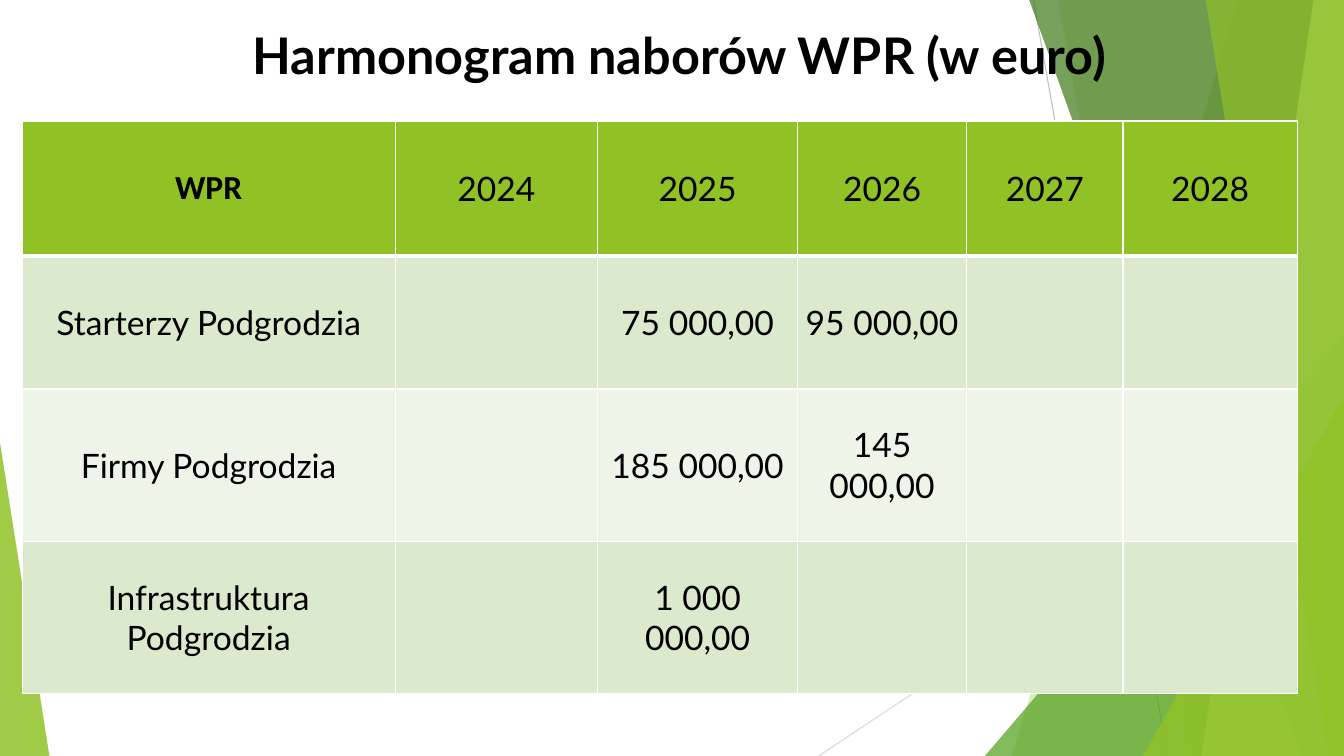
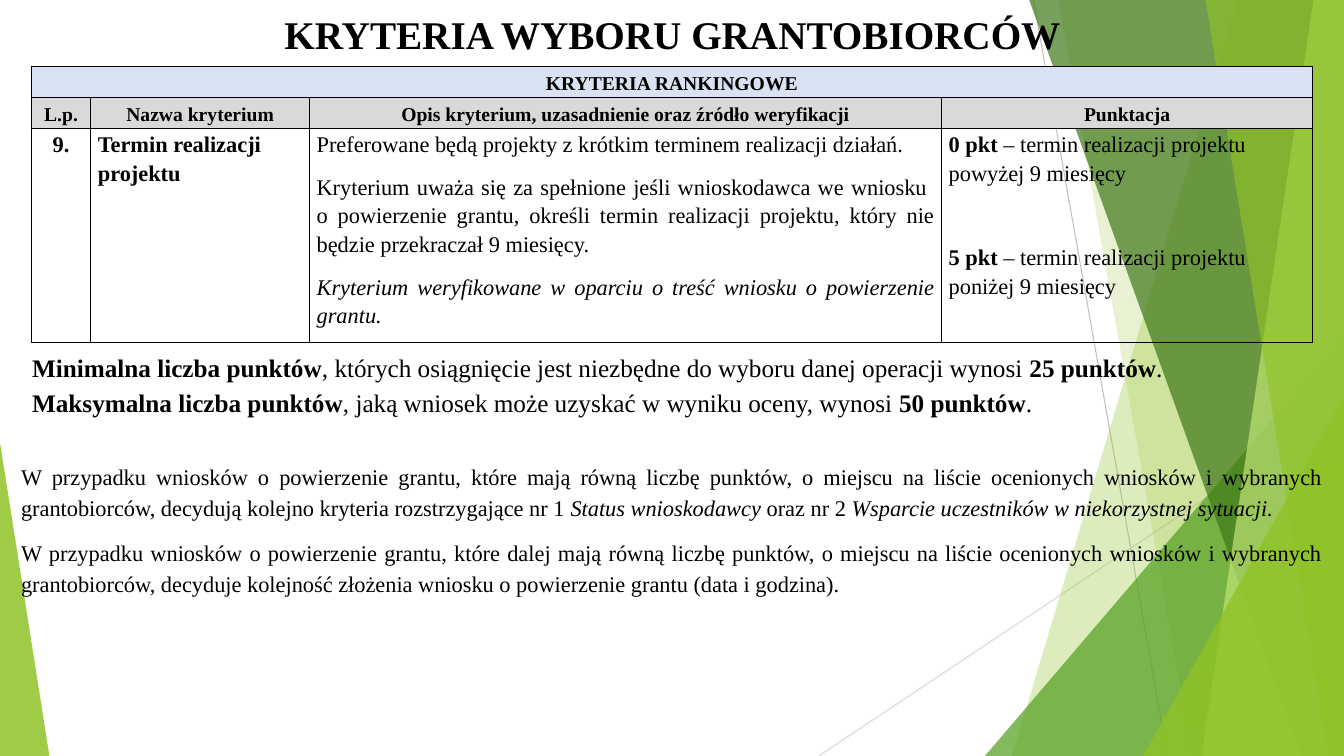
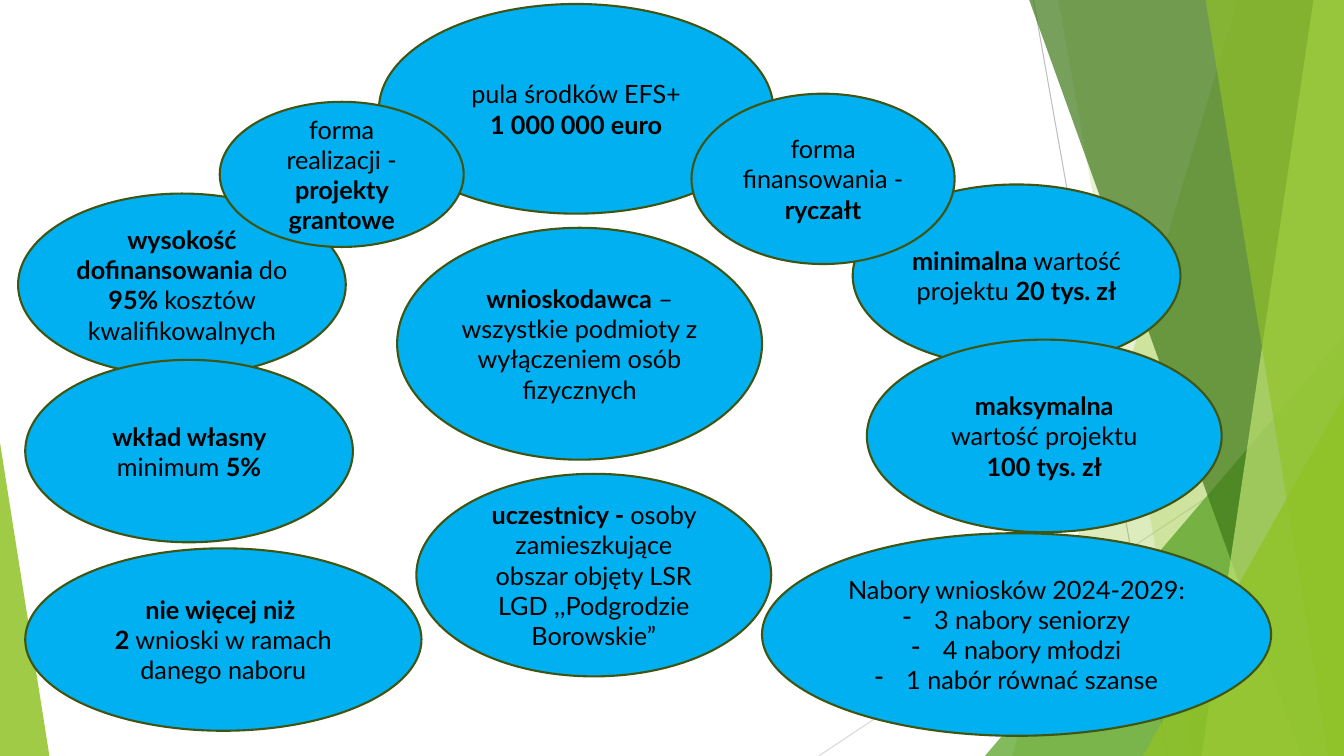
from dataclasses import dataclass

from lxml import etree
from pptx import Presentation
from pptx import util as u
from pptx.dml.color import RGBColor
from pptx.enum import shapes, text
from pptx.oxml.ns import qn


@dataclass(frozen=True)
class Theme:
    sans: str = "Lato"
    label: str = "Calibri"
    serif: str = "Times New Roman"
    ink: str = "000000"
    white: str = "FFFFFF"
    lime: str = "90C226"
    pale_lime: str = "C0E474"
    green: str = "54A021"
    forest: str = "3F7819"
    band_dark: str = "DBE9CD"
    band_light: str = "EEF4E8"
    blue_head: str = "D9E2F3"
    grey_head: str = "D9D9D9"
    grey_line: str = "BFBFBF"
    bubble: str = "00B0F0"
    bubble_edge: str = "3F5511"
    title: int = 36
    title_small: int = 28
    large: int = 24
    body: int = 18
    small: int = 16
    caption: int = 14


THEME = Theme()
WIDTH, HEIGHT = u.Inches(13.333), u.Inches(7.5)
LEFT, CENTER, JUSTIFY = (text.PP_ALIGN.LEFT, text.PP_ALIGN.CENTER,
                         text.PP_ALIGN.JUSTIFY)
TOP, MIDDLE = text.MSO_ANCHOR.TOP, text.MSO_ANCHOR.MIDDLE


def across(percent):
    return round(WIDTH * percent / 100)


def down(percent):
    return round(HEIGHT * percent / 100)


def area(left, top, width, height):
    """Turn percentages of the slide into a position and a size."""
    return across(left), down(top), across(width), down(height)


def rgb(color):
    return RGBColor.from_string(color)


def write(frame, paragraphs, *, size=THEME.body, font=THEME.sans,
          align=CENTER, leading=None, after=0, bold=False):
    """Fill a frame; *stars* mark bold, _underscores_ italic, "- " a bullet."""
    frame.word_wrap = True
    if isinstance(paragraphs, str):
        paragraphs = [paragraphs]
    for index, content in enumerate(paragraphs):
        para = frame.add_paragraph() if index else frame.paragraphs[0]
        para.alignment = align
        para.line_spacing = leading
        if after and index < len(paragraphs) - 1:
            para.space_after = u.Pt(after)
        if content.startswith("- "):
            content = content[2:]
            add_bullet(para)
        for number, line in enumerate(content.split("\n")):
            if number:
                para.add_line_break()
            for b, chunk in enumerate(line.split("*")):
                for i, part in enumerate(chunk.split("_")):
                    if part:
                        span = para.add_run()
                        span.text = part
                        span.font.name = font
                        span.font.size = u.Pt(size)
                        span.font.bold = bold or b % 2 == 1
                        span.font.italic = i % 2 == 1
                        span.font.color.rgb = rgb(THEME.ink)


def add_bullet(para):
    properties = para._p.get_or_add_pPr()
    indent = u.Inches(0.31)
    properties.set("marL", str(indent))
    properties.set("indent", str(-indent))
    etree.SubElement(properties, qn("a:buChar")).set("char", "-")


def add_text(page, place, paragraphs, anchor=TOP, **form):
    box = page.shapes.add_textbox(*area(*place))
    box.text_frame.vertical_anchor = anchor
    write(box.text_frame, paragraphs, **form)


def add_title(page, place, content, **form):
    add_text(page, place, content, MIDDLE, bold=True, leading=0.9, **form)


def paint(shape, color, opacity=100):
    shape.shadow.inherit = False
    shape.fill.solid()
    shape.fill.fore_color.rgb = rgb(color)
    shape.line.fill.background()
    if opacity < 100:
        tint = shape.element.spPr.find(".//" + qn("a:srgbClr"))
        etree.SubElement(tint, qn("a:alpha")).set("val", str(opacity * 1000))


def add_facet(page, top_x, bottom_x, color, opacity):
    """A full-height panel with a slanted left side and the slide's right edge."""
    outline = page.shapes.build_freeform(across(top_x), 0)
    outline.add_line_segments(
        [(WIDTH, 0), (WIDTH, HEIGHT), (across(bottom_x), HEIGHT)], close=True)
    paint(outline.convert_to_shape(), color, opacity)


def add_corner(page, left, top, width, peak, color, opacity):
    """A triangle that stands on the bottom edge."""
    triangle = page.shapes.add_shape(
        shapes.MSO_SHAPE.ISOSCELES_TRIANGLE,
        *area(left, top, width, 100 - top))
    triangle.adjustments[0] = peak
    paint(triangle, color, opacity)


def add_hairline(page, start, end, color):
    line = page.shapes.add_connector(
        shapes.MSO_CONNECTOR.STRAIGHT, across(start[0]), down(start[1]),
        across(end[0]), down(end[1]))
    line.line.color.rgb = rgb(color)
    line.line.width = u.Pt(0.75)
    etree.SubElement(line.element.spPr, qn("a:effectLst"))


def decorate(layout, page):
    """Draw the green facets on a page, then move them to its layout."""
    for holder in list(layout.placeholders):
        layout.shapes.element.remove(holder.element)
    add_hairline(page, (76.9, 0), (86.87, 100), THEME.grey_line)
    add_hairline(page, (100, 53.73), (60.92, 100), THEME.grey_head)
    add_facet(page, 92.1, 75.3, THEME.lime, 30)
    add_facet(page, 78.75, 88.73, THEME.lime, 20)
    add_corner(page, 73.28, 44.4, 26.72, 1, THEME.green, 72)
    add_facet(page, 76.58, 96.83, THEME.forest, 70)
    add_facet(page, 97.73, 89.4, THEME.pale_lime, 70)
    add_facet(page, 89.7, 98.85, THEME.lime, 65)
    add_corner(page, 85.05, 52.4, 14.95, 1, THEME.lime, 80)
    add_corner(page, 0, 58.53, 3.68, 0, THEME.lime, 85)
    for shape in list(page.shapes):
        layout.shapes.element.append(shape.element)


def add_grid(page, left, top, columns, rows):
    """An unstyled table with the given column widths and row heights."""
    table = page.shapes.add_table(
        len(rows), len(columns),
        *area(left, top, sum(columns), sum(rows))).table
    table.first_row = table.horz_banding = False
    for column, width in zip(table.columns, columns):
        column.width = across(width)
    for row, height in zip(table.rows, rows):
        row.height = down(height)
    return table


def style_cell(cell, fill, edge, inset, anchor=MIDDLE, top=1, bottom=1):
    cell.vertical_anchor = anchor
    cell.margin_left = cell.margin_right = u.Inches(inset)
    cell.margin_top = cell.margin_bottom = 0
    if fill:
        cell.fill.solid()
        cell.fill.fore_color.rgb = rgb(fill)
    else:
        cell.fill.background()
    properties = cell._tc.get_or_add_tcPr()
    sides = {"a:lnL": 1, "a:lnR": 1, "a:lnT": top, "a:lnB": bottom}
    for index, (side, weight) in enumerate(sides.items()):
        border = etree.Element(qn(side), w=str(u.Pt(weight)))
        solid = etree.SubElement(border, qn("a:solidFill"))
        etree.SubElement(solid, qn("a:srgbClr")).set("val", edge)
        properties.insert(index, border)


def add_bubble(page, place, paragraphs):
    bubble = page.shapes.add_shape(shapes.MSO_SHAPE.OVAL, *area(*place))
    paint(bubble, THEME.bubble)
    bubble.line.color.rgb = rgb(THEME.bubble_edge)
    bubble.line.width = u.Pt(1.5)
    bubble.text_frame.vertical_anchor = MIDDLE
    write(bubble.text_frame, paragraphs)


def build_schedule(page):
    content = [
        ["WPR", "2024", "2025", "2026", "2027", "2028"],
        ["Starterzy Podgrodzia", "", "75 000,00", "95 000,00", "", ""],
        ["Firmy Podgrodzia", "", "185 000,00", "145 000,00", "", ""],
        ["Infrastruktura Podgrodzia", "", "1 000 000,00", "", "", ""],
    ]
    fills = [THEME.lime, THEME.band_dark, THEME.band_light, THEME.band_dark]
    table = add_grid(page, 1.65, 16,
                     [27.75, 15.08, 14.85, 12.6, 11.63, 12.98],
                     [17.87, 17.6, 20.13, 20.13])
    for r, row in enumerate(content):
        for c, value in enumerate(row):
            cell = table.cell(r, c)
            style_cell(cell, fills[r], THEME.white, 0.01,
                       top=3 if r == 1 else 1, bottom=3 if r == 0 else 1)
            corner = r == c == 0
            write(cell.text_frame, value, size=THEME.large, bold=corner,
                  font=THEME.label if corner else THEME.sans)
    add_title(page, (7.43, 1.33, 86.25, 12.67),
              "Harmonogram naborów WPR (w euro)", size=THEME.title)


def build_criteria(page):
    add_title(page, (6.9, 1.07, 86.25, 7.6), "KRYTERIA WYBORU GRANTOBIORCÓW",
              size=THEME.title_small, font=THEME.serif)
    heads = [
        ["KRYTERIA RANKINGOWE", "", "", ""],
        ["L.p.", "Nazwa kryterium",
         "Opis kryterium, uzasadnienie oraz źródło weryfikacji", "Punktacja"],
    ]
    details = [
        ("*9.*", CENTER, 10),
        ("*Termin realizacji projektu*", LEFT, 10),
        (["Preferowane będą projekty z krótkim terminem realizacji działań. ",
          "Kryterium uważa się za spełnione jeśli wnioskodawca we wniosku \n"
          "o powierzenie grantu, określi termin realizacji projektu, który "
          "nie będzie przekraczał 9 miesięcy.",
          "_Kryterium weryfikowane w oparciu o treść wniosku o powierzenie "
          "grantu._"], JUSTIFY, 10),
        (["*0 pkt* – termin realizacji projektu powyżej 9 miesięcy",
          "*5 pkt* – termin realizacji projektu poniżej 9 miesięcy"],
         LEFT, 40),
    ]
    table = add_grid(page, 2.33, 8.8, [4.43, 16.28, 47.03, 27.6],
                     [4.13, 4.13, 26.4])
    prose = {"font": THEME.serif, "leading": 1.15}
    for r, (row, fill) in enumerate(
            zip(heads, [THEME.blue_head, THEME.grey_head])):
        for c, value in enumerate(row):
            cell = table.cell(r, c)
            style_cell(cell, fill, THEME.ink, 0.06)
            write(cell.text_frame, value, size=THEME.caption, bold=True,
                  **prose)
    for c, (value, align, after) in enumerate(details):
        cell = table.cell(2, c)
        style_cell(cell, None, THEME.ink, 0.07, anchor=TOP)
        write(cell.text_frame, value, size=THEME.small, align=align,
              after=after, **prose)
    table.cell(0, 0).merge(table.cell(0, 3))

    add_text(page, (1.65, 45.33, 96, 10.27),
             "*Minimalna liczba punktów*, których osiągnięcie jest niezbędne "
             "do wyboru danej operacji wynosi *25 punktów*. \n"
             "*Maksymalna liczba punktów*, jaką wniosek może uzyskać w wyniku "
             "oceny, wynosi *50 punktów*.", align=LEFT, **prose)
    add_text(page, (0.83, 60.13, 98.33, 19.47), [
        "W przypadku wniosków o powierzenie grantu, które mają równą liczbę "
        "punktów, o miejscu na liście ocenionych wniosków i wybranych "
        "grantobiorców, decydują kolejno kryteria rozstrzygające nr 1 "
        "_Status wnioskodawcy_ oraz nr 2 _Wsparcie uczestników w "
        "niekorzystnej sytuacji. _",
        "W przypadku wniosków o powierzenie grantu, które dalej mają równą "
        "liczbę punktów, o miejscu na liście ocenionych wniosków i wybranych "
        "grantobiorców, decyduje kolejność złożenia wniosku o powierzenie "
        "grantu (data i godzina).",
    ], size=THEME.small, align=JUSTIFY, after=10, **prose)


def build_overview(page):
    bubbles = [
        ((1.35, 25.6, 24.38, 24.13),
         "*wysokość dofinansowania *do *95% *kosztów kwalifikowalnych"),
        ((1.88, 47.6, 24.38, 24.13), "*wkład własny *minimum *5%*"),
        ((63.45, 24.4, 24.38, 24.13),
         "*minimalna *wartość projektu *20 tys. zł*"),
        ((64.5, 44.93, 26.4, 25.47),
         "*maksymalna* wartość projektu *100 tys. zł*"),
        ((29.55, 30.13, 27.15, 30.67),
         "*wnioskodawca* – wszystkie podmioty z wyłączeniem osób fizycznych"),
        ((56.7, 70.53, 37.88, 26.8),
         ["Nabory wniosków 2024-2029:", "- 3 nabory seniorzy",
          "- 4 nabory młodzi", "- 1 nabór równać szanse"]),
        ((28.2, 0.53, 29.33, 27.73),
         ["pula środków EFS+", "*1 000 000 euro*"]),
        ((1.88, 72.53, 29.48, 24.13),
         "*nie więcej niż *\n*2* wnioski w ramach danego naboru"),
        ((16.35, 13.47, 18.15, 19.2),
         "forma realizacji - *projekty grantowe*"),
        ((51.45, 12.4, 19.58, 22.53), "forma finansowania - *ryczałt*"),
        ((30.98, 62.67, 26.4, 26.8),
         "*uczestnicy - *osoby zamieszkujące obszar objęty LSR LGD "
         ",,Podgrodzie Borowskie”"),
    ]
    for place, paragraphs in bubbles:
        add_bubble(page, place, paragraphs)


def main():
    deck = Presentation()
    deck.slide_width, deck.slide_height = WIDTH, HEIGHT
    blank = deck.slide_layouts[6]
    builders = [build_schedule, build_criteria, build_overview]
    pages = [deck.slides.add_slide(blank) for _ in builders]
    decorate(blank, pages[0])
    for build, page in zip(builders, pages):
        build(page)
    deck.save("out.pptx")


if __name__ == "__main__":
    main()
